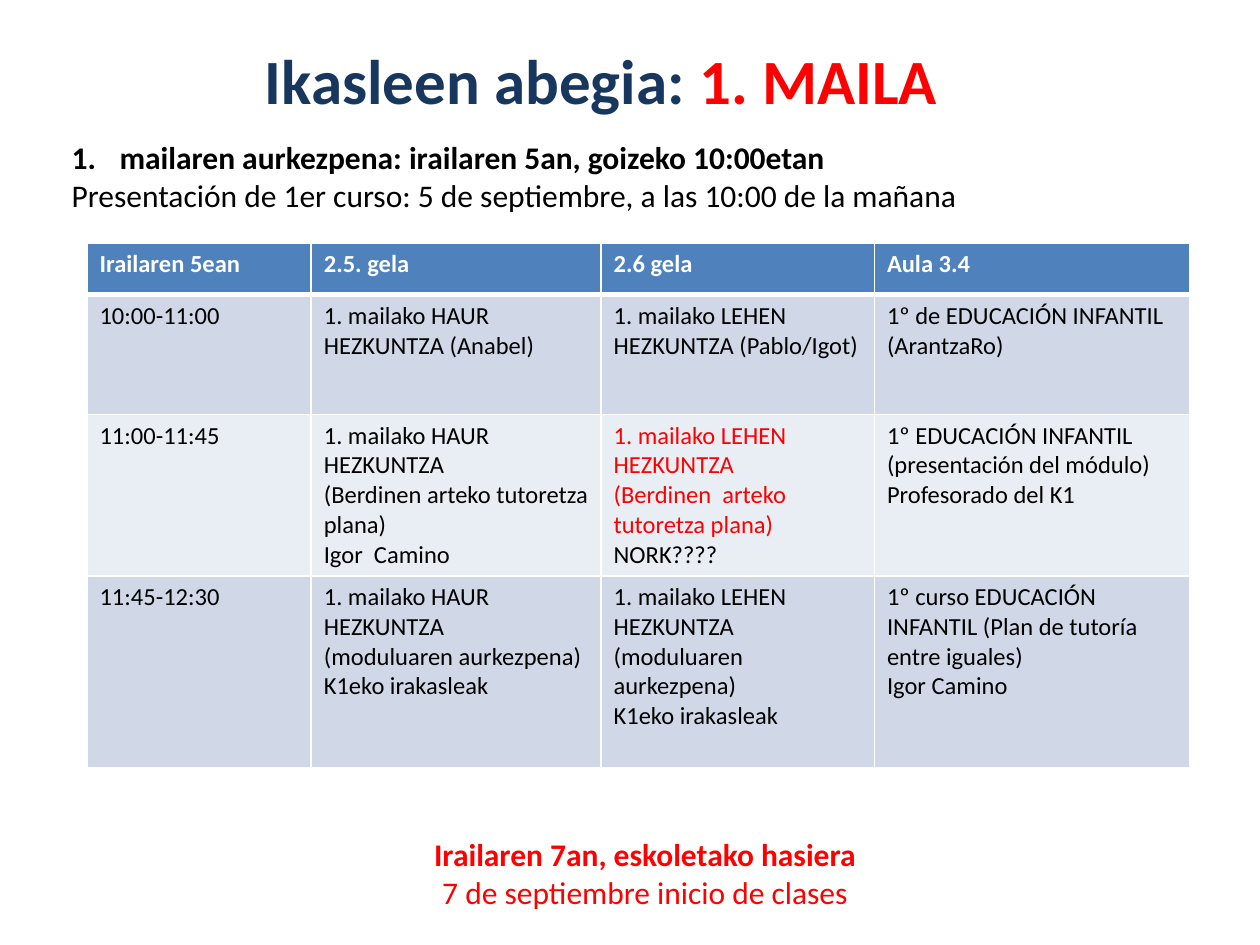
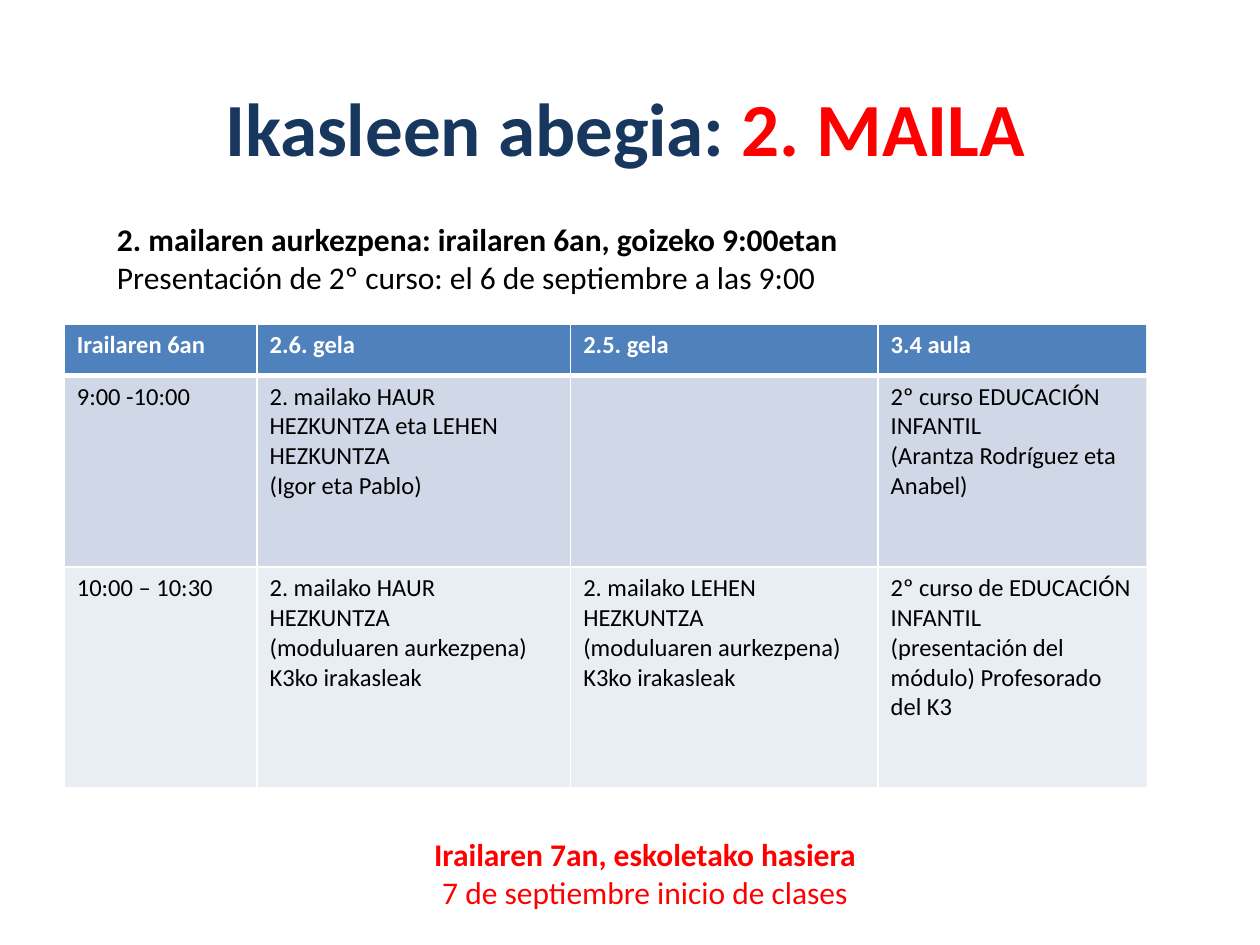
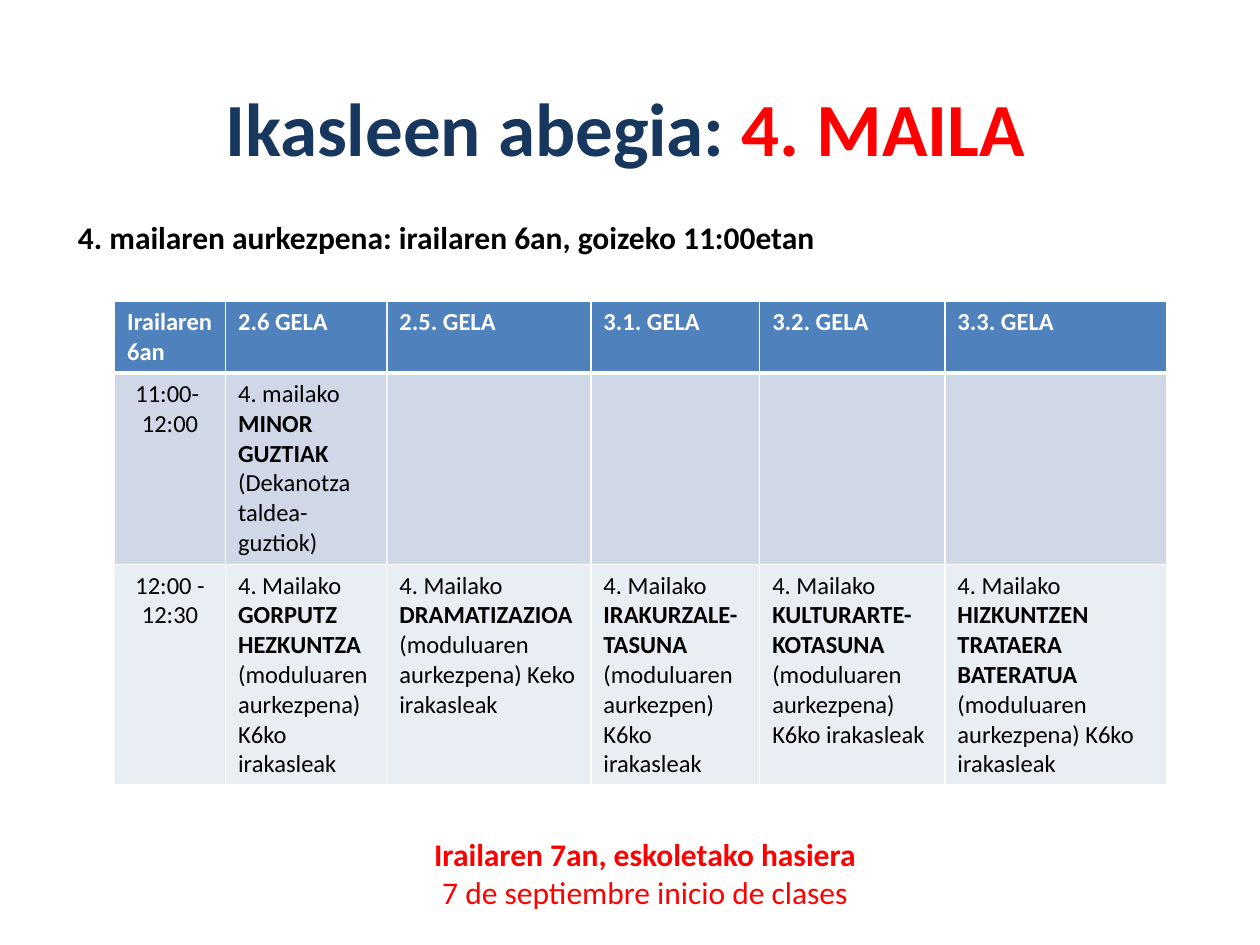
from dataclasses import dataclass
from lxml import etree
from pptx import Presentation
from pptx.dml.color import RGBColor
from pptx.enum.text import MSO_ANCHOR, PP_ALIGN
from pptx.oxml.ns import qn
from pptx.util import Inches, Pt

LEFT, MID = PP_ALIGN.LEFT, PP_ALIGN.CENTER
TOP, CENTRE = MSO_ANCHOR.TOP, MSO_ANCHOR.MIDDLE
WIDE, HIGH = 10, 7.5


@dataclass(frozen=True)
class Theme:
    font: str = "Calibri"
    navy: str = "17375E"
    red: str = "FF0000"
    black: str = "000000"
    white: str = "FFFFFF"
    pale: str = "F2F2F2"
    head: str = "4F81BD"
    bands: tuple = ("D0D8E8", "E9EDF4")
    body: int = 18
    cell: int = 14
    thin: int = 1
    thick: int = 3


T = Theme()


def bold(text):
    return text, {"bold": True}


def red(text):
    return text, {"color": T.red}


# A cell lists its paragraphs; a paragraph is one run or a list of runs.
MODULE = "(moduluaren aurkezpena) K{}ko irakasleak"
K3, K6 = MODULE.format(3), MODULE.format(6)
FOOT = [bold("Irailaren 7an, eskoletako hasiera"), "7 de septiembre inicio de clases"]
FOOT_BOX = (0.79, 6.58, 8.66, 0.71)
TITLE_BOX = (0.43, 0.29, 9.06, 1.42)

SLIDES = [
    {
        "level": "1. MAILA", "title": (0.24, 0.11, 9.06, 1.04), "size": 36,
        "intro": [bold("mailaren aurkezpena: irailaren 5an, goizeko 10:00etan"),
                  "Presentación de 1er curso: 5 de septiembre, a las 10:00 de la mañana"],
        "intro_at": (0.47, 1.05), "numbered": True,
        "table_at": (0.69, 1.93), "pale_edge": None,
        "cols": [1.78, 2.3, 2.17, 2.5], "rows": [0.41, 0.95, 1.28, 1.52],
        "cells": [
            [["Irailaren 5ean"], ["2.5. gela"], ["2.6 gela"], ["Aula 3.4"]],
            [["10:00-11:00"],
             ["1. mailako HAUR HEZKUNTZA (Anabel)"],
             ["1. mailako LEHEN HEZKUNTZA (Pablo/Igot)"],
             ["1º de EDUCACIÓN INFANTIL (ArantzaRo)"]],
            [["11:00-11:45"],
             ["1. mailako HAUR HEZKUNTZA", "(Berdinen arteko tutoretza plana)",
              "Igor  Camino"],
             [red("1. mailako LEHEN HEZKUNTZA"),
              red("(Berdinen  arteko tutoretza plana)"), "NORK????"],
             ["1º EDUCACIÓN INFANTIL",
              "(presentación del módulo) Profesorado del K1"]],
            [["11:45-12:30"],
             ["1. mailako HAUR HEZKUNTZA", "(moduluaren aurkezpena) K1eko irakasleak"],
             ["1. mailako LEHEN HEZKUNTZA (moduluaren aurkezpena)", "K1eko irakasleak"],
             ["1º curso EDUCACIÓN INFANTIL (Plan de tutoría entre iguales)",
              "Igor Camino"]],
        ],
    },
    {
        "level": "2. MAILA", "title": TITLE_BOX, "size": 42.9,
        "intro": [bold("2. mailaren aurkezpena: irailaren 6an, goizeko 9:00etan"),
                  "Presentación de 2º curso: el 6 de septiembre a las 9:00"],
        "intro_at": (0.83, 1.7), "numbered": False,
        "table_at": (0.51, 2.57), "pale_edge": 4,
        "cols": [1.53, 2.49, 2.44, 2.13], "rows": [0.41, 1.52, 1.75],
        "cells": [
            [["Irailaren 6an"], ["2.6. gela"], ["2.5. gela"], ["3.4 aula"]],
            [["9:00 -10:00"],
             ["2. mailako HAUR HEZKUNTZA eta LEHEN HEZKUNTZA", "(Igor eta Pablo)"],
             [],
             ["2º curso EDUCACIÓN INFANTIL", "(Arantza Rodríguez eta Anabel)"]],
            [["10:00 – 10:30"],
             ["2. mailako HAUR HEZKUNTZA", K3],
             ["2. mailako LEHEN HEZKUNTZA", K3],
             ["2º curso de EDUCACIÓN INFANTIL",
              "(presentación del módulo) Profesorado del K3"]],
        ],
    },
    {
        "level": "4. MAILA", "title": TITLE_BOX, "size": 42.9,
        "intro": [bold("4. mailaren aurkezpena: irailaren 6an, goizeko 11:00etan")],
        "intro_at": (0.52, 1.68), "numbered": False,
        "table_at": (0.91, 2.39), "pale_edge": 2, "mid_times": True,
        "cols": [0.88, 1.28, 1.62, 1.34, 1.47, 1.76], "rows": [0.57, 1.52, 1.75],
        "cells": [
            [["Irailaren 6an"], ["2.6 GELA"], ["2.5. GELA"], ["3.1. GELA"],
             ["3.2. GELA"], ["3.3. GELA"]],
            [["11:00- ", "12:00"],
             [["4. mailako ", bold("MINOR GUZTIAK")], "(Dekanotza taldea- guztiok)"],
             [], [], [], []],
            [["12:00 - 12:30"]] + [
                [["4. Mailako ", bold(name)], note] for name, note in [
                    ("GORPUTZ HEZKUNTZA", K6),
                    ("DRAMATIZAZIOA", "(moduluaren aurkezpena) Keko irakasleak"),
                    ("IRAKURZALE-TASUNA", "(moduluaren aurkezpen) K6ko irakasleak"),
                    ("KULTURARTE-KOTASUNA", K6),
                    ("HIZKUNTZEN TRATAERA BATERATUA", K6)]],
        ],
    },
]


def write(frame, paras, size, color=T.black, strong=False, align=LEFT):
    for i, runs in enumerate(paras):
        para = frame.paragraphs[0] if i == 0 else frame.add_paragraph()
        para.alignment = align
        for part in runs if isinstance(runs, list) else [runs]:
            text, style = (part, {}) if isinstance(part, str) else part
            run = para.add_run()
            run.text = text
            font = run.font
            font.name, font.size = T.font, Pt(size)
            font.bold = style.get("bold", strong)
            font.color.rgb = RGBColor.from_string(style.get("color", color))


def add_text(slide, box, paras, size, anchor=TOP, **style):
    frame = slide.shapes.add_textbox(*map(Inches, box)).text_frame
    frame.word_wrap = True
    frame.vertical_anchor = anchor
    write(frame, paras, size, **style)
    return frame


def number(para):
    """Give a paragraph an automatic number and a hanging indent."""
    props = para._p.get_or_add_pPr()
    props.set("marL", str(Inches(0.38)))
    props.set("indent", str(-Inches(0.38)))
    etree.SubElement(props, qn("a:buAutoNum"), type="arabicPeriod")


def edge(cell, lines):
    """Draw cell borders, given as (side, colour, points) in L, R, T, B order."""
    props = cell._tc.get_or_add_tcPr()
    for i, (side, color, width) in enumerate(lines):
        line = etree.Element(qn(f"a:ln{side}"), w=str(Pt(width)))
        fill = etree.SubElement(line, qn("a:solidFill"))
        etree.SubElement(fill, qn("a:srgbClr"), val=color)
        props.insert(i, line)


def add_grid(slide, data):
    cols, rows, pale = data["cols"], data["rows"], data["pale_edge"]
    box = (*data["table_at"], sum(cols), sum(rows))
    table = slide.shapes.add_table(len(rows), len(cols), *map(Inches, box)).table
    for col, width in zip(table.columns, cols):
        col.width = Inches(width)
    for row, height in zip(table.rows, rows):
        row.height = Inches(height)
    for r, line in enumerate(data["cells"]):
        head = r == 0
        for c, paras in enumerate(line):
            cell = table.cell(r, c)
            cell.fill.solid()
            cell.fill.fore_color.rgb = RGBColor.from_string(
                T.head if head else T.bands[(r - 1) % 2])
            mid = data.get("mid_times") and c == 0 and not head
            write(cell.text_frame, paras, T.cell, T.white if head else T.black,
                  head, MID if mid else LEFT)
            edge(cell, [
                ("L", T.pale if c == pale else T.white, T.thin),
                ("R", T.pale if c + 1 == pale else T.white, T.thin),
                ("T", T.white, T.thick if r == 1 else T.thin),
                ("B", T.white, T.thick if head else T.thin)])


def build(slide, data):
    add_text(slide, data["title"], [["Ikasleen abegia: ", red(data["level"])]],
             data["size"], CENTRE, color=T.navy, strong=True, align=MID)
    add_grid(slide, data)
    tall = 0.1 + 0.3 * len(data["intro"])
    intro = add_text(slide, (*data["intro_at"], 8.98, tall), data["intro"], T.body)
    if data["numbered"]:
        number(intro.paragraphs[0])
    add_text(slide, FOOT_BOX, FOOT, T.body, color=T.red, align=MID)


def main():
    deck = Presentation()
    deck.slide_width, deck.slide_height = Inches(WIDE), Inches(HIGH)
    for data in SLIDES:
        build(deck.slides.add_slide(deck.slide_layouts[6]), data)
    deck.save("out.pptx")


if __name__ == "__main__":
    main()
